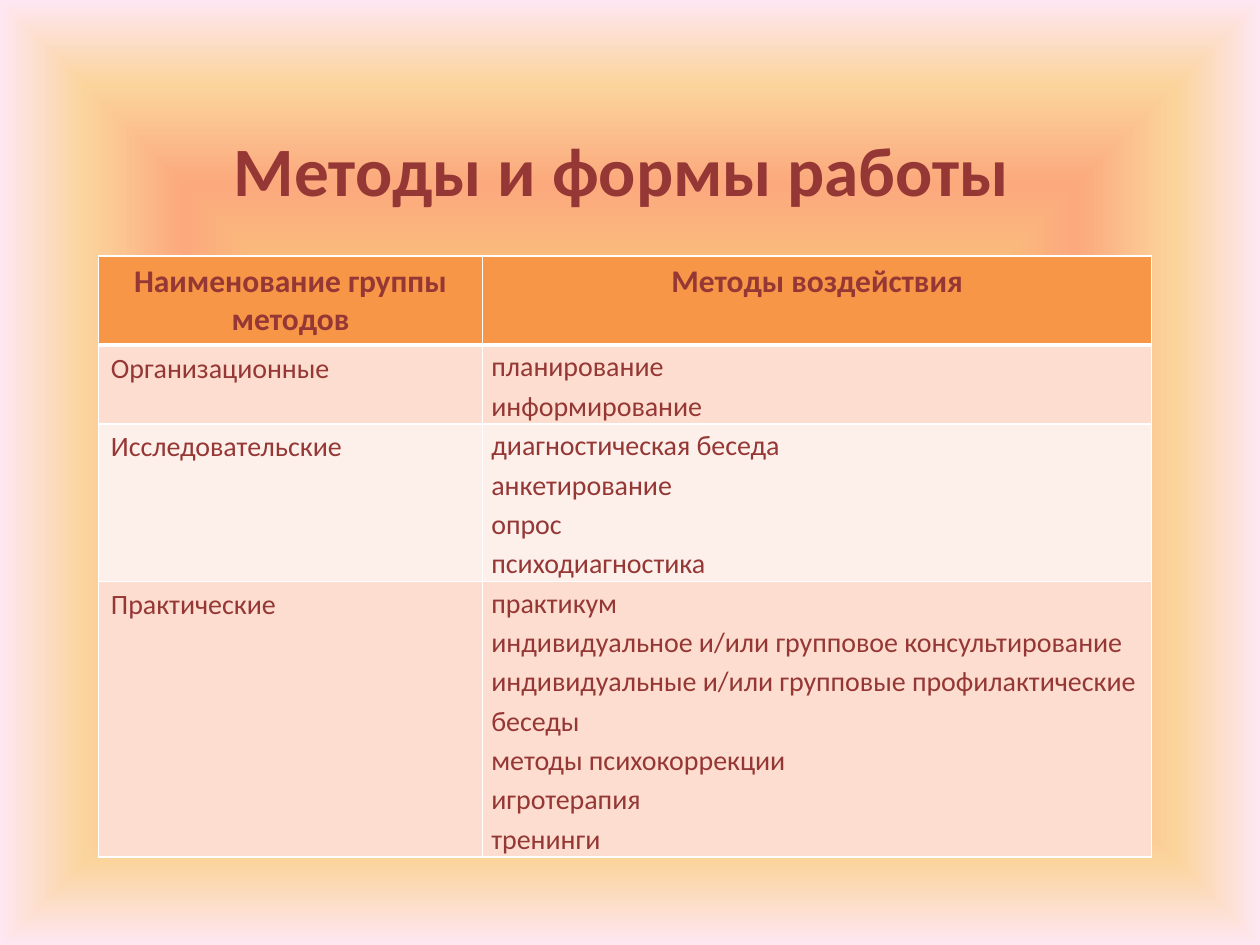
from lxml.etree import SubElement
from pptx import Presentation
from pptx.dml.color import RGBColor
from pptx.enum.text import MSO_ANCHOR, PP_ALIGN
from pptx.oxml.ns import qn
from pptx.util import Pt

TITLE = "Методы и формы работы"
HEADS = ["Наименование группы методов", "Методы воздействия"]
GROUPS = [
    ("Организационные", ["планирование", "информирование"]),
    ("Исследовательские", ["диагностическая беседа", "анкетирование",
                           "опрос", "психодиагностика"]),
    ("Практические", ["практикум",
                      "индивидуальное и/или групповое консультирование",
                      "индивидуальные и/или групповые профилактические беседы",
                      "методы психокоррекции", "игротерапия", "тренинги"]),
]
LINES = [2, 4, 7]  # text lines per group, after wrapping
STOPS = [(0, "FBEAC7"), (18, "FEE7F2"), (36, "FAC77D"),
         (61, "FBA97D"), (82, "FBD49C"), (100, "FEE7F2")]
INK, HEAD, BANDS = "953735", "F79646", ["FCDDCF", "FDEFE9"]
COLS = [219.6, 382.3]
HEAD_H, LINE_H = 51, 22.5


def color(code):
    return RGBColor.from_string(code)


def style(para, size, bold=False, align=PP_ALIGN.LEFT):
    para.alignment = align
    font = para.font
    font.name, font.size, font.bold = "Calibri", Pt(size), bold
    font.color.rgb = color(INK)


def paint_back(slide):
    """Fill the background with a gradient that runs from centre to edges."""
    fill = slide.background.fill
    fill.gradient()
    grad = slide.background._cSld.find(".//" + qn("a:gradFill"))
    for child in list(grad):
        grad.remove(child)
    stops = SubElement(grad, qn("a:gsLst"))
    for pos, code in STOPS:
        stop = SubElement(stops, qn("a:gs"), pos=str(pos * 1000))
        SubElement(stop, qn("a:srgbClr"), val=code)
    shade = SubElement(grad, qn("a:path"), path="shape")
    SubElement(shade, qn("a:fillToRect"), {side: "50000" for side in "ltrb"})


def dress(cell, fill, top=1, bottom=1):
    """Give a cell white borders, then its fill."""
    props = cell._tc.get_or_add_tcPr()
    for side, width in zip("LRTB", (1, 1, top, bottom)):
        line = SubElement(props, qn("a:ln" + side), w=str(Pt(width)))
        solid = SubElement(line, qn("a:solidFill"))
        SubElement(solid, qn("a:srgbClr"), val="FFFFFF")
    cell.fill.solid()
    cell.fill.fore_color.rgb = color(fill)


deck = Presentation()
deck.slide_width, deck.slide_height = Pt(720), Pt(540)
slide = deck.slides.add_slide(deck.slide_layouts[6])
paint_back(slide)

box = slide.shapes.add_textbox(Pt(44.6), Pt(62), Pt(621.4), Pt(168.5))
frame = box.text_frame
frame.word_wrap = True
frame.margin_top = Pt(11)
frame.text = TITLE
style(frame.paragraphs[0], 39.6, True, PP_ALIGN.CENTER)

tall = [HEAD_H] + [LINE_H * count for count in LINES]
table = slide.shapes.add_table(len(tall), len(COLS), Pt(56.2), Pt(146.2),
                               Pt(sum(COLS)), Pt(sum(tall))).table
for col, width in zip(table.columns, COLS):
    col.width = Pt(width)
for row, height in zip(table.rows, tall):
    row.height = Pt(height)

for col, text in enumerate(HEADS):
    cell = table.cell(0, col)
    cell.text = text
    style(cell.text_frame.paragraphs[0], 18, True, PP_ALIGN.CENTER)
    dress(cell, HEAD, bottom=3)

for row, (group, items) in enumerate(GROUPS, 1):
    name, list_cell = table.cell(row, 0), table.cell(row, 1)
    name.text = group
    style(name.text_frame.paragraphs[0], 16)
    list_cell.text = "\n".join(items)
    list_cell.vertical_anchor = MSO_ANCHOR.MIDDLE
    list_cell.margin_left = list_cell.margin_right = Pt(5)
    list_cell.margin_top = list_cell.margin_bottom = 0
    for para in list_cell.text_frame.paragraphs:
        style(para, 16)
        para.line_spacing = 1.15
    for cell in (name, list_cell):
        dress(cell, BANDS[(row - 1) % 2], top=3 if row == 1 else 1)

deck.save("out.pptx")
